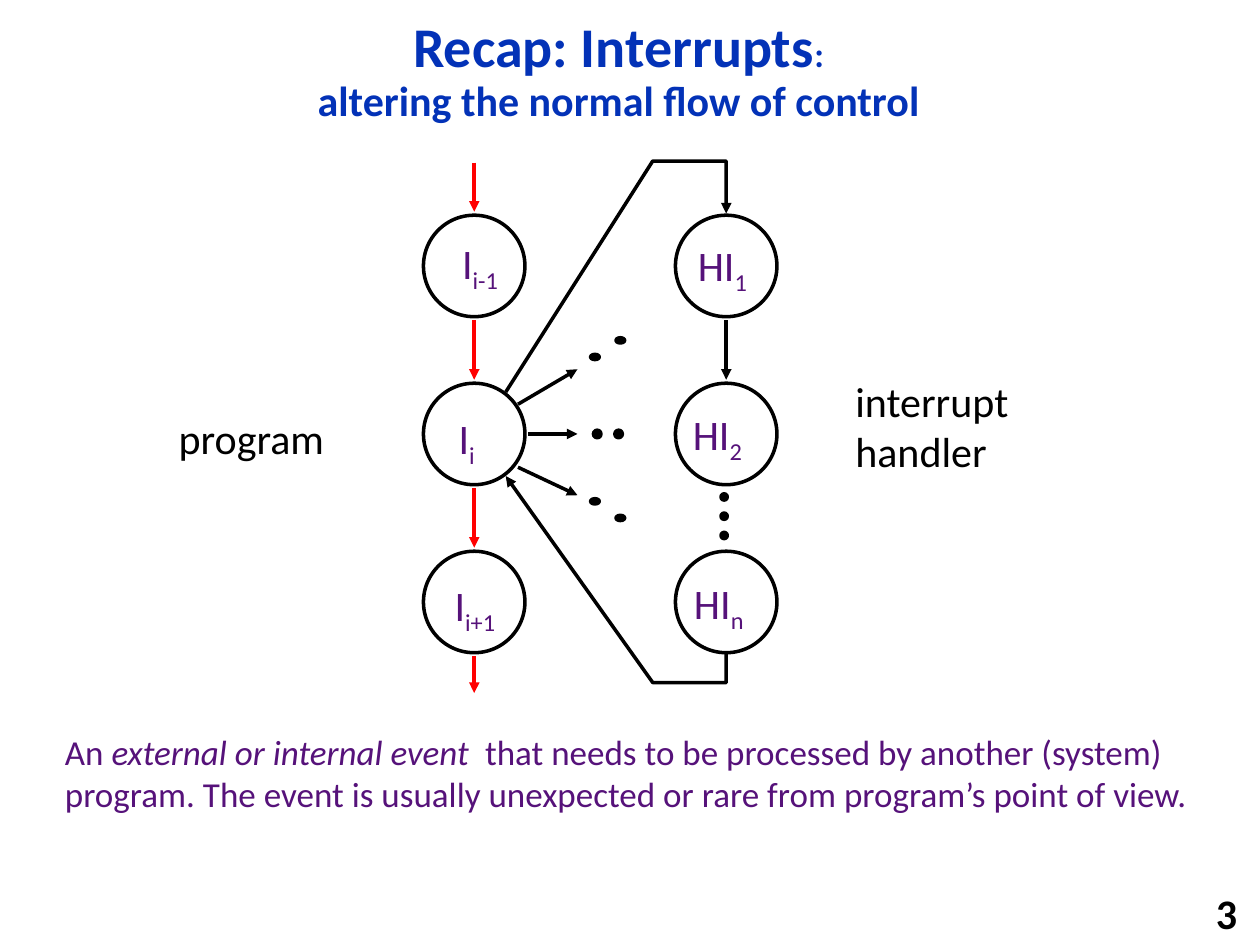
from pptx import Presentation
from pptx.dml.color import RGBColor
from pptx.enum.shapes import MSO_CONNECTOR, MSO_SHAPE
from pptx.enum.text import MSO_ANCHOR, MSO_AUTO_SIZE, PP_ALIGN
from pptx.oxml.ns import qn
from pptx.util import Pt
from lxml import etree

OVAL = MSO_SHAPE.OVAL
STRAIGHT = MSO_CONNECTOR.STRAIGHT
MIDDLE = MSO_ANCHOR.MIDDLE
FIT_SHAPE = MSO_AUTO_SIZE.SHAPE_TO_FIT_TEXT
NO_FIT = MSO_AUTO_SIZE.NONE
LEFT, CENTER, RIGHT = PP_ALIGN.LEFT, PP_ALIGN.CENTER, PP_ALIGN.RIGHT

THEME = {
    "font": "Calibri",
    "title": RGBColor(0x03, 0x32, 0xB7),
    "accent": RGBColor(0x56, 0x12, 0x7A),
    "ink": RGBColor(0, 0, 0),
    "flow": RGBColor(0xFF, 0, 0),
    "paper": RGBColor(0xFF, 0xFF, 0xFF),
    "title_size": 32,
    "label_size": 24,
    "body_size": 20,
    "stroke": 2,
}

TITLE = [("Recap: Interrupts", THEME["title_size"]), (":", THEME["body_size"])]
SUBTITLE = "altering the normal flow of control"

# Instruction columns: centre x, then (name, subscript, label box) downwards
ROWS = [152, 248, 344]
DIAMETER = 58
COLUMNS = {
    271: [("I", "i-1", (257, 132, 37.5, 36)),
          ("I", "i", (255, 232, 24.5, 36)),
          ("I", "i+1", (252.7, 327.6, 40.3, 36))],
    415: [("HI", "1", (391.7, 133.2, 44, 36)),
          ("HI", "2", (388.8, 229.7, 44, 36)),
          ("HI", "n", (389.5, 326.2, 44, 36))],
}
CAPTIONS = [
    (["program"], (95, 232, 99.4, 36)),
    (["interrupt", "handler"], (481.7, 211, 103, 65.5)),
]
SUMMARY = [
    ("An ", False),
    ("external or internal event", True),
    ("  that needs to be processed by another (system) program. The event is "
     "usually unexpected or rare from program’s point of view.", False),
]

PROGRAM_FLOW = [(93, 121), (183, 217), (279, 313), (375, 396)]
HANDLER_FLOW = [(183, 217)]
FAN_ARROWS = [((296, 231), (330, 211)),
              ((302, 248), (330, 248)),
              ((296, 267), (330, 283))]
CALL_PATH = [(289, 224), (373, 92), (415, 92), (415, 122)]
RETURN_PATH = [(415, 373), (415, 390), (373, 390), (289, 272)]
# Ellipsis dots: (width, height), centres
DOTS = [
    ((5, 3), [(340, 204), (354.5, 194.5), (340, 286.5), (354.5, 296)]),
    ((4.3, 4.3), [(341.3, 248), (353.5, 248)]),
    ((3.6, 3.6), [(413.8, 284 + 11 * step) for step in range(3)]),
]


def add_run(paragraph, text, size, color, bold=False, italic=False):
    run = paragraph.add_run()
    run.text = text
    font = run.font
    font.name, font.size, font.bold, font.italic = THEME["font"], Pt(size), bold, italic
    font.color.rgb = color
    return run


def add_box(slide, box, wrap=False, fit=FIT_SHAPE):
    frame = slide.shapes.add_textbox(*map(Pt, box)).text_frame
    frame.word_wrap = wrap
    frame.auto_size = fit
    return frame


def stroke(shape, color):
    shape.line.color.rgb = color
    shape.line.width = Pt(THEME["stroke"])


def point_arrow(shape):
    etree.SubElement(shape.line._get_or_add_ln(), qn("a:tailEnd"), type="triangle")


def add_arrow(slide, start, end, color=THEME["ink"]):
    arrow = slide.shapes.add_connector(STRAIGHT, *map(Pt, start + end))
    stroke(arrow, color)
    point_arrow(arrow)
    etree.SubElement(arrow._element.spPr, qn("a:effectLst"))


def add_bent_arrow(slide, points):
    start, *rest = [(Pt(x), Pt(y)) for x, y in points]
    builder = slide.shapes.build_freeform(*start)
    builder.add_line_segments(rest, close=False)
    path = builder.convert_to_shape()
    path.fill.background()
    path.shadow.inherit = False
    stroke(path, THEME["ink"])
    point_arrow(path)


def add_oval(slide, center, width, height, fill):
    x, y = center
    oval = slide.shapes.add_shape(
        OVAL, Pt(x - width / 2), Pt(y - height / 2), Pt(width), Pt(height))
    oval.shadow.inherit = False
    oval.fill.solid()
    oval.fill.fore_color.rgb = fill
    stroke(oval, THEME["ink"])


def add_title(slide):
    title = slide.shapes.title
    title.left, title.top, title.width, title.height = map(Pt, (66, 12, 575, 58.5))
    frame = title.text_frame
    frame.vertical_anchor = MIDDLE
    frame.auto_size = NO_FIT
    paragraph = frame.paragraphs[0]
    paragraph.alignment = CENTER
    paragraph.line_spacing = 0.9
    for text, size in TITLE:
        add_run(paragraph, text, size, THEME["title"], bold=True)
    paragraph.add_line_break()
    add_run(paragraph, SUBTITLE, THEME["label_size"], THEME["title"], bold=True)


def add_diagram(slide):
    for x, instructions in COLUMNS.items():
        for y, (name, subscript, box) in zip(ROWS, instructions):
            add_oval(slide, (x, y), DIAMETER, DIAMETER, THEME["paper"])
            paragraph = add_box(slide, box).paragraphs[0]
            add_run(paragraph, name, THEME["label_size"], THEME["accent"])
            lowered = add_run(paragraph, subscript, THEME["label_size"], THEME["accent"])
            lowered.font._element.set("baseline", "-25000")

    program_x, handler_x = COLUMNS
    for x, flow, color in ((program_x, PROGRAM_FLOW, THEME["flow"]),
                           (handler_x, HANDLER_FLOW, THEME["ink"])):
        for top, bottom in flow:
            add_arrow(slide, (x, top), (x, bottom), color)
    for start, end in FAN_ARROWS:
        add_arrow(slide, start, end)
    for points in (CALL_PATH, RETURN_PATH):
        add_bent_arrow(slide, points)
    for (width, height), centers in DOTS:
        for center in centers:
            add_oval(slide, center, width, height, THEME["ink"])


def add_texts(slide):
    for lines, box in CAPTIONS:
        frame = add_box(slide, box)
        for index, line in enumerate(lines):
            paragraph = frame.add_paragraph() if index else frame.paragraphs[0]
            paragraph.alignment = LEFT
            add_run(paragraph, line, THEME["label_size"], THEME["ink"])

    summary = add_box(slide, (30, 414, 660, 79), wrap=True).paragraphs[0]
    for text, italic in SUMMARY:
        add_run(summary, text, THEME["body_size"], THEME["accent"], italic=italic)

    number_frame = add_box(slide, (564, 510, 150, 23), fit=NO_FIT)
    number_frame.vertical_anchor = MIDDLE
    number = number_frame.paragraphs[0]
    number.alignment = RIGHT
    add_run(number, "3", THEME["label_size"], THEME["ink"], bold=True)


def main():
    deck = Presentation()
    deck.slide_width, deck.slide_height = Pt(720), Pt(540)
    slide = deck.slides.add_slide(deck.slide_layouts[5])
    add_title(slide)
    add_diagram(slide)
    add_texts(slide)
    deck.save("out.pptx")


if __name__ == "__main__":
    main()
